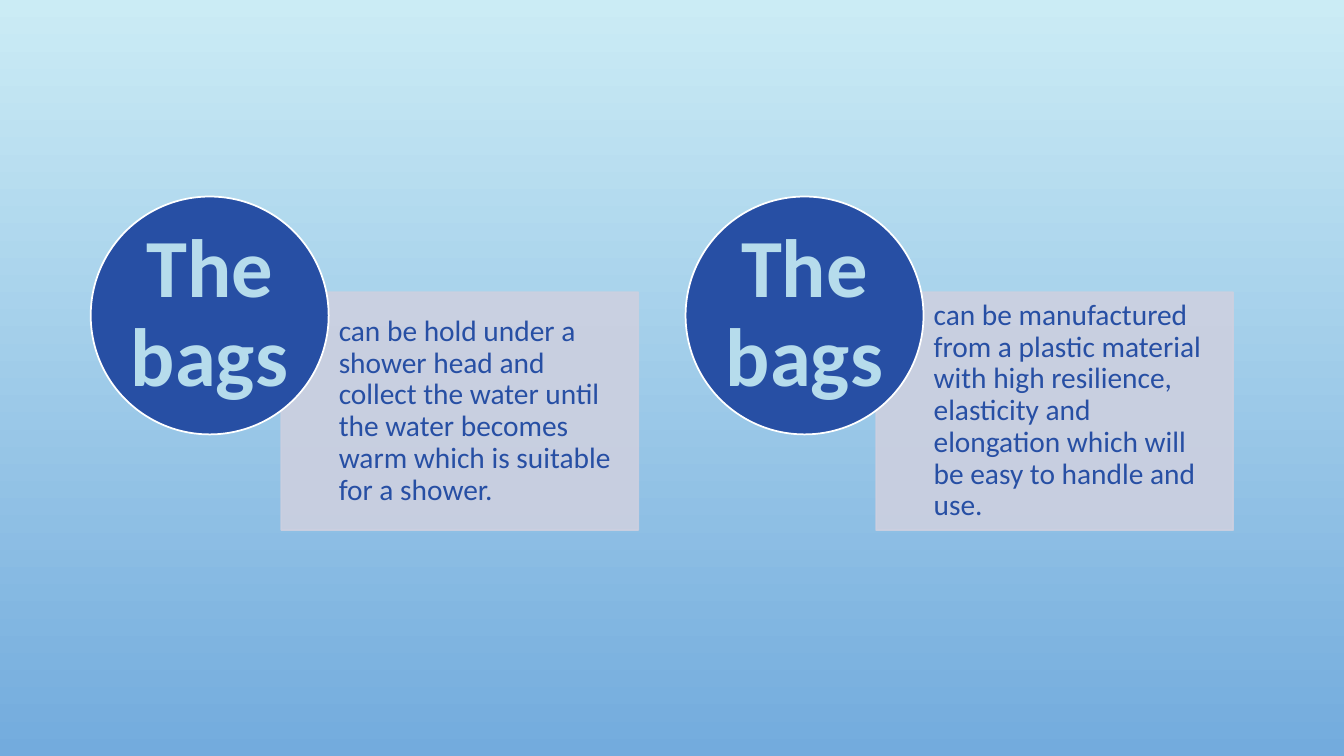
from dataclasses import dataclass

from pptx import Presentation
from pptx.dml.color import RGBColor
from pptx.enum.shapes import MSO_SHAPE
from pptx.enum.text import MSO_ANCHOR, PP_ALIGN
from pptx.oxml import parse_xml
from pptx.oxml.ns import nsdecls, qn
from pptx.util import Inches, Pt

RECT, OVAL = MSO_SHAPE.RECTANGLE, MSO_SHAPE.OVAL
MIDDLE = MSO_ANCHOR.MIDDLE
LEFT, CENTER = PP_ALIGN.LEFT, PP_ALIGN.CENTER


@dataclass(frozen=True)
class Theme:
    """Colours, font and sizes of the slide."""
    sky_top: str = "CBECF5"
    sky_bottom: str = "73ABDD"
    navy: str = "274FA4"
    panel: str = "CDD0E0"
    white: str = "FFFFFF"
    label: str = "B6DCEC"
    label_outline: str = "48A8D0"
    font: str = "Calibri"
    label_size: int = 59
    body_size: int = 21
    line_width: float = 1.25
    outline_width: float = 1.75
    panel_alpha: int = 90


THEME = Theme()
CARDS = [
    ("The bags", "can be hold under a shower head and collect the water until "
                 "the water becomes warm which is suitable for a shower."),
    ("The bags", "can be manufactured from a plastic material with high resilience, "
                 "elasticity and elongation which will be easy to handle and use."),
]
CARD_LEFT, CARD_TOP, CARD_STEP = 0.9, 1.95, 5.9
DIAMETER = 2.36
PANEL_DX, PANEL_DY, PANEL_WIDTH = 1.89, 0.95, 3.54
PANEL_INSETS = (0.57, 0.16, 0.16, 0.16)


def paint_background(s):
    """Fill the slide with a gradient from top to bottom."""
    fill = s.background.fill
    fill.gradient()
    fill.gradient_angle = 270
    for stop, color in zip(fill.gradient_stops, (THEME.sky_top, THEME.sky_bottom)):
        stop.color.rgb = RGBColor.from_string(color)


def add_text_shape(s, kind, box, fill, line, text, size, color, align, insets):
    """Add a filled shape with one paragraph and return it."""
    sp = s.shapes.add_shape(kind, *map(Inches, box))
    sp.shadow.inherit = False
    sp.fill.solid()
    sp.fill.fore_color.rgb = RGBColor.from_string(fill)
    sp.line.color.rgb = RGBColor.from_string(line)
    sp.line.width = Pt(THEME.line_width)
    tf = sp.text_frame
    tf.word_wrap = True
    tf.vertical_anchor = MIDDLE
    tf.margin_left, tf.margin_top, tf.margin_right, tf.margin_bottom = map(Inches, insets)
    tf.text = text
    p = tf.paragraphs[0]
    p.alignment = align
    p.line_spacing = 0.9
    font = p.runs[0].font
    font.name = THEME.font
    font.size = Pt(size)
    font.color.rgb = RGBColor.from_string(color)
    return sp


def set_alpha(sp, percent):
    """Make the fill and line of a shape translucent."""
    for color in sp._element.spPr.iter(qn("a:srgbClr")):
        color.append(parse_xml(f'<a:alpha {nsdecls("a")} val="{percent * 1000}"/>'))


def outline_text(r, color, width):
    """Draw an outline around the letters of a run."""
    r._r.get_or_add_rPr().insert(0, parse_xml(
        f'<a:ln {nsdecls("a")} w="{Pt(width)}"><a:solidFill>'
        f'<a:srgbClr val="{color}"/></a:solidFill></a:ln>'))


def add_card(s, left, top, label, body):
    """Place a text panel with a labelled circle over its corner."""
    panel = add_text_shape(
        s, RECT, (left + PANEL_DX, top + PANEL_DY, PANEL_WIDTH, DIAMETER),
        THEME.panel, THEME.panel, body, THEME.body_size, THEME.navy, LEFT, PANEL_INSETS)
    set_alpha(panel, THEME.panel_alpha)
    circle = add_text_shape(
        s, OVAL, (left, top, DIAMETER, DIAMETER),
        THEME.navy, THEME.white, label, THEME.label_size, THEME.label, CENTER, (0, 0, 0, 0))
    r = circle.text_frame.paragraphs[0].runs[0]
    r.font.bold = True
    outline_text(r, THEME.label_outline, THEME.outline_width)


def main():
    """Build the slide and save it."""
    prs = Presentation()
    prs.slide_width, prs.slide_height = Inches(13.33), Inches(7.5)
    s = prs.slides.add_slide(prs.slide_layouts[6])
    paint_background(s)
    for i, (label, body) in enumerate(CARDS):
        add_card(s, CARD_LEFT + i * CARD_STEP, CARD_TOP, label, body)
    prs.save("out.pptx")


if __name__ == "__main__":
    main()
